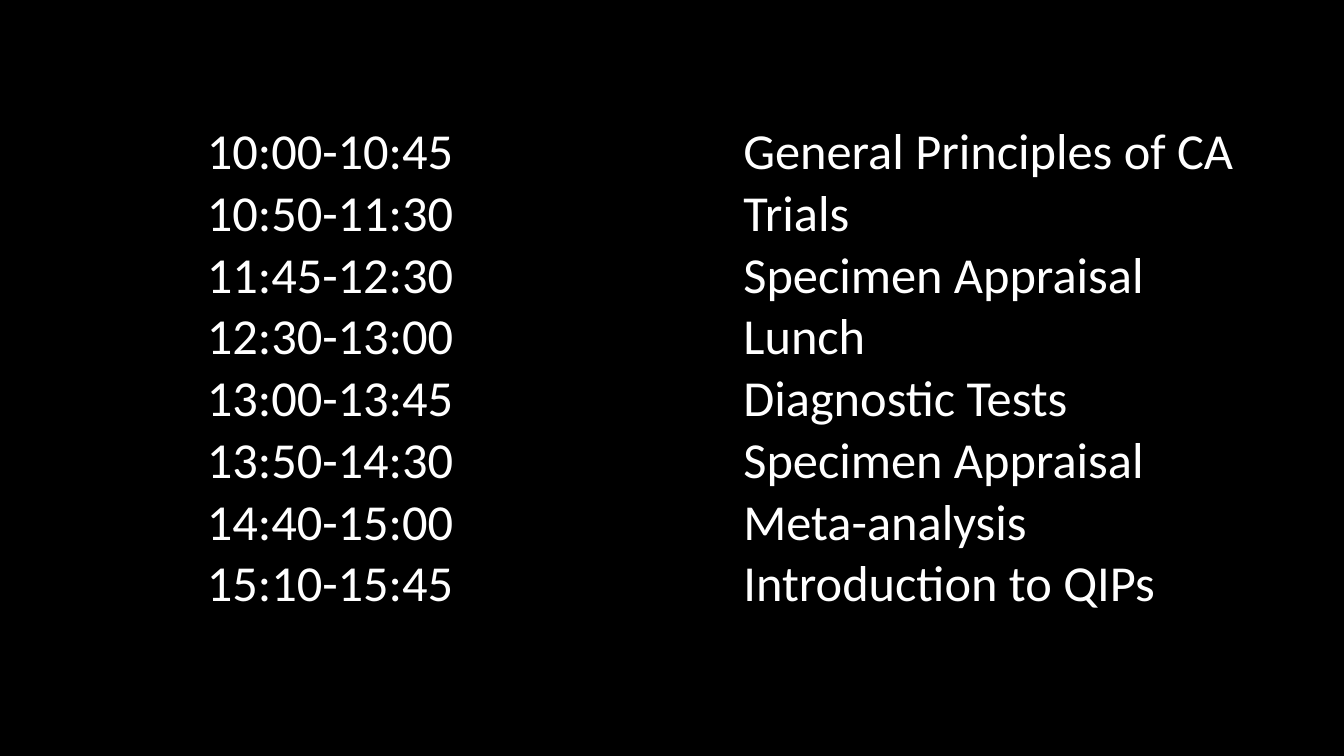
from lxml.etree import SubElement
from pptx import Presentation
from pptx.dml.color import RGBColor
from pptx.oxml.ns import qn
from pptx.util import Emu, Pt

BLACK = RGBColor(0, 0, 0)
WHITE = RGBColor(255, 255, 255)
EMU_PER_PX = 9525

SESSIONS = [
    ("10:00-10:45", "General Principles of CA"),
    ("10:50-11:30", "Trials"),
    ("11:45-12:30", "Specimen Appraisal"),
    ("12:30-13:00", "Lunch"),
    ("13:00-13:45", "Diagnostic Tests"),
    ("13:50-14:30", "Specimen Appraisal"),
    ("14:40-15:00", "Meta-analysis"),
    ("15:10-15:45", "Introduction to QIPs"),
]


def px(length):
    return Emu(length * EMU_PER_PX)


def write(para, text, *, font="Calibri", size=36, color=WHITE):
    span = para.add_run()
    span.text = text
    span.font.name = font
    span.font.size = Pt(size)
    span.font.color.rgb = color


class SlideBuilder:
    def __init__(self, deck, background):
        self.slide = deck.slides.add_slide(deck.slide_layouts[6])
        fill = self.slide.background.fill
        fill.solid()
        fill.fore_color.rgb = background

    def style_cell(self, cell):
        """Strip the cell of insets, borders and fill."""
        cell.margin_left = cell.margin_right = 0
        cell.margin_top = cell.margin_bottom = 0
        properties = cell._tc.get_or_add_tcPr()
        for side in ("L", "R", "T", "B"):
            border = SubElement(properties, qn(f"a:ln{side}"), w="0")
            SubElement(border, qn("a:noFill"))
        cell.fill.background()

    def table(self, rows, left, top, column_widths, row_heights):
        frame = self.slide.shapes.add_table(
            len(rows), len(column_widths), px(left), px(top),
            px(sum(column_widths)), px(sum(row_heights)))
        table = frame.table
        table.first_row = table.horz_banding = False
        for column, width in zip(table.columns, column_widths):
            column.width = px(width)
        for row, height, texts in zip(table.rows, row_heights, rows):
            row.height = px(height)
            for cell, text in zip(row.cells, texts):
                self.style_cell(cell)
                if text:
                    write(cell.text_frame.paragraphs[0], text)


def main():
    deck = Presentation()
    deck.slide_width, deck.slide_height = px(1280), px(720)
    builder = SlideBuilder(deck, BLACK)
    builder.table([("", "")] + SESSIONS, left=197, top=79,
                  column_widths=[511, 511],
                  row_heights=[37] + [58] * len(SESSIONS))
    deck.save("out.pptx")


if __name__ == "__main__":
    main()
